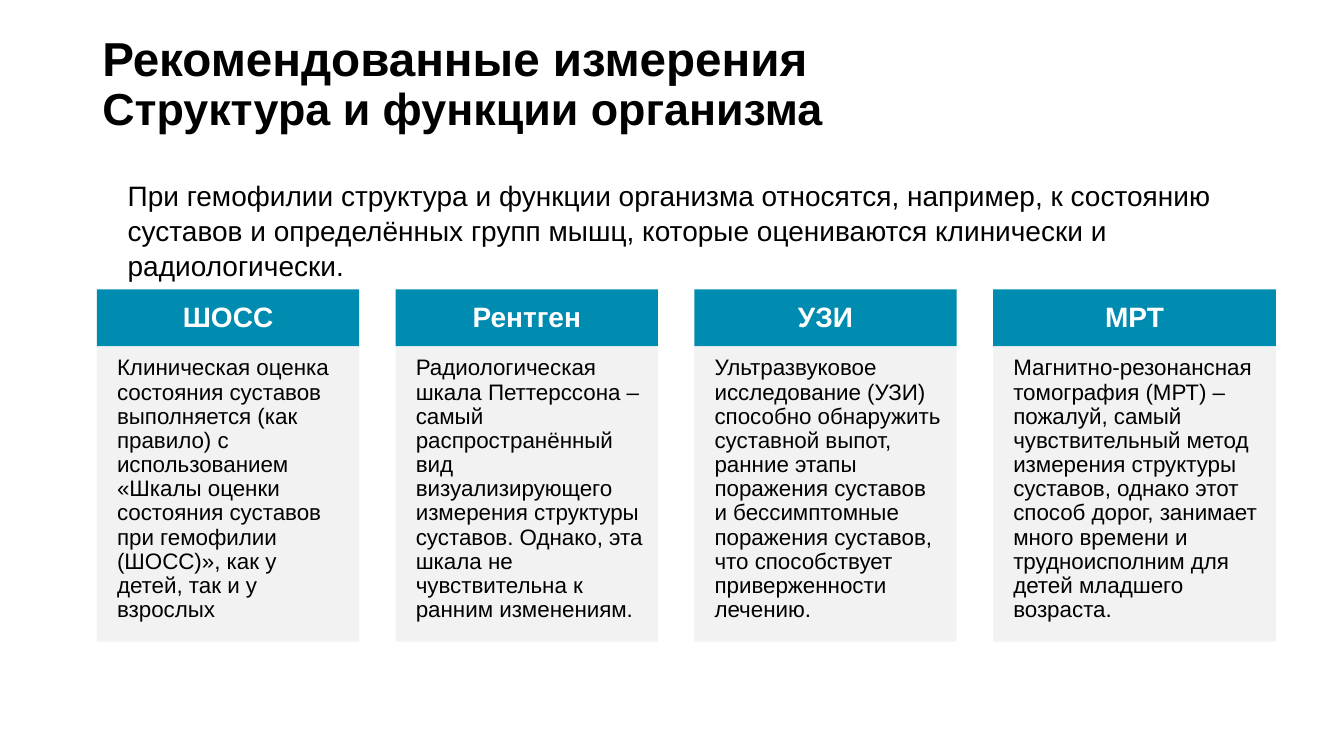
import pptx
import pptx.dml.color
import pptx.enum.shapes
import pptx.enum.text
import pptx.util

Pt = pptx.util.Pt
Align = pptx.enum.text.PP_ALIGN
Anchor = pptx.enum.text.MSO_ANCHOR
Shape = pptx.enum.shapes.MSO_SHAPE

CARDS = [
    ("ШОСС", 187.4, "Клиническая оценка состояния суставов выполняется (как правило) с использованием «Шкалы оценки состояния суставов при гемофилии (ШОСС)», как у детей, так и у взрослых"),
    ("Рентген", 187.4, "Радиологическая шкала Петтерссона – самый распространённый вид визуализирующего измерения структуры суставов. Однако, эта шкала не чувствительна к ранним изменениям."),
    ("УЗИ", 187.4, "Ультразвуковое исследование (УЗИ) способно обнаружить суставной выпот, ранние этапы поражения суставов и бессимптомные поражения суставов, что способствует приверженности лечению."),
    ("МРТ", 202, "Магнитно-резонансная томография (МРТ) – пожалуй, самый чувствительный метод измерения структуры суставов, однако этот способ дорог, занимает много времени и трудноисполним для детей младшего возраста."),
]


def color(code):
    return pptx.dml.color.RGBColor.from_string(code)


class Deck:
    font = "Arial"
    ink = "000000"
    light = "FFFFFF"
    teal = "008BB0"
    gray = "F2F2F2"

    def __init__(self, wide, high):
        self.file = pptx.Presentation()
        self.file.slide_width = Pt(wide)
        self.file.slide_height = Pt(high)
        self.slide = self.file.slides.add_slide(self.file.slide_layouts[6])

    def label(self, shape, lines, inset, ink=ink, bold=False, space=0.9,
              align=Align.LEFT, anchor=Anchor.TOP):
        frame = shape.text_frame
        frame.word_wrap = True
        frame.vertical_anchor = anchor
        (frame.margin_left, frame.margin_top,
         frame.margin_right, frame.margin_bottom) = map(Pt, inset)
        frame.text = "\n".join(text for text, size in lines)
        for para, (text, size) in zip(frame.paragraphs, lines):
            para.alignment = align
            para.line_spacing = space
            para.font.name = self.font
            para.font.size = Pt(size)
            para.font.bold = bold
            para.font.color.rgb = color(ink)

    def text(self, box, lines, inset, **style):
        shape = self.slide.shapes.add_textbox(*map(Pt, box))
        self.label(shape, lines, inset, **style)

    def block(self, box, fill, lines, inset, **style):
        shape = self.slide.shapes.add_shape(Shape.RECTANGLE, *map(Pt, box))
        shape.shadow.inherit = False
        shape.fill.solid()
        shape.fill.fore_color.rgb = color(fill)
        shape.line.fill.background()
        self.label(shape, lines, inset, **style)

    def card(self, left, top, width, head, body):
        cap = 40.7
        self.block((left, top, width, cap), self.teal, [(head, 20)],
                   (13.7, 7.9, 13.7, 7.9), ink=self.light, bold=True,
                   align=Align.CENTER, anchor=Anchor.MIDDLE)
        self.block((left, top + cap, width, 210.8), self.gray, [(body, 16)],
                   (14.4, 7.2, 10, 11.5))


def main():
    deck = Deck(960, 540)
    deck.text((66, 18, 828, 86),
              [("Рекомендованные измерения", 34),
               ("Структура и функции организма", 32)],
              (7.2, 3.6, 7.2, 3.6), bold=True, anchor=Anchor.MIDDLE)
    deck.text((66, 123, 828, 86),
              [("При гемофилии структура и функции организма относятся, например, к состоянию суставов и определённых групп мышц, которые оцениваются клинически и радиологически.", 20)],
              (25.2, 3.6, 7.2, 3.6), space=1.04)
    for col, (head, width, body) in enumerate(CARDS):
        deck.card(69.2 + 213.4 * col, 206.8, width, head, body)
    deck.file.save("out.pptx")


if __name__ == "__main__":
    main()
